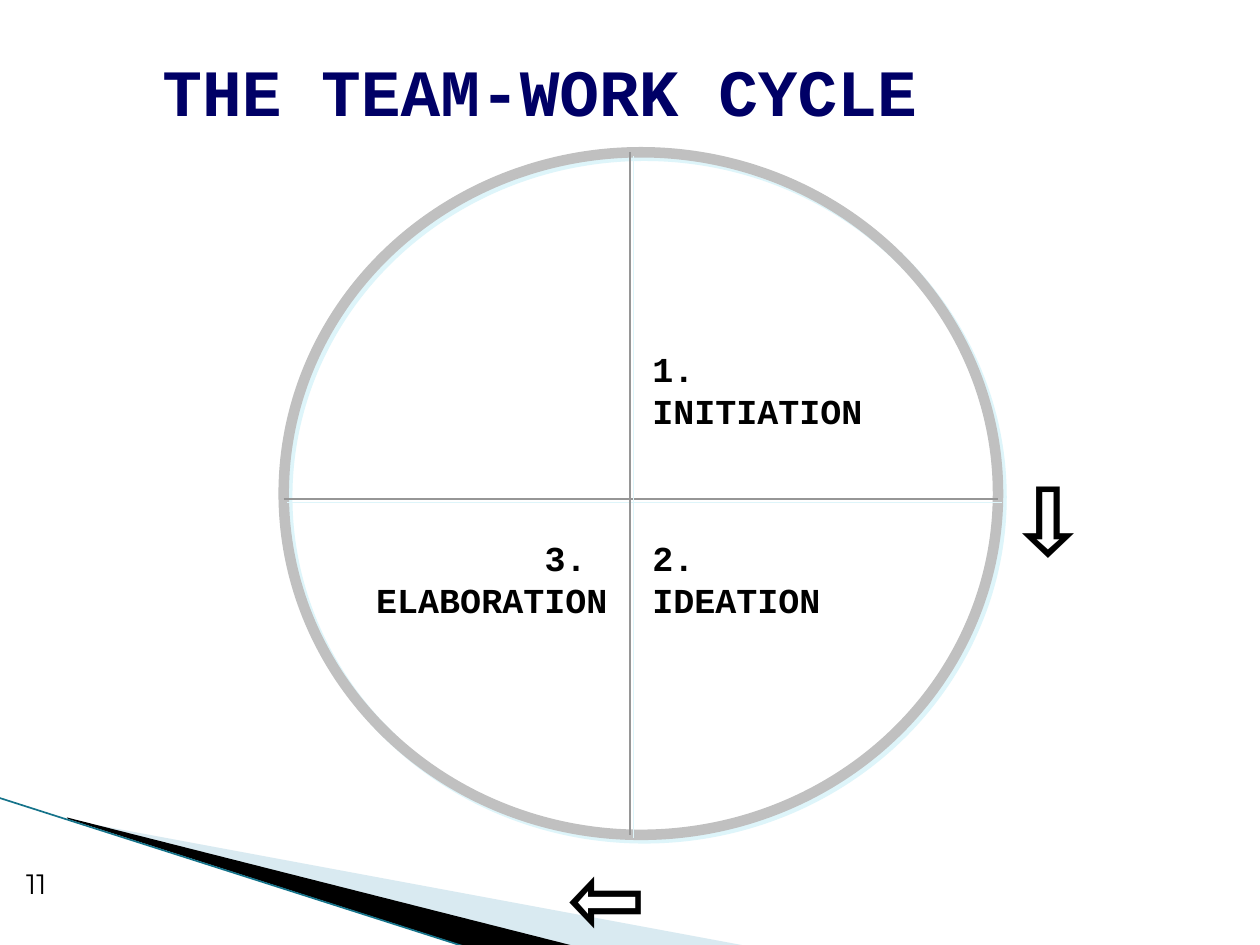
from lxml import etree
from pptx import Presentation
from pptx import util as u
from pptx.dml.color import RGBColor
from pptx.enum import shapes, text
from pptx.oxml.ns import qn

HEADING_FONT = "Courier New"
NUMBER_FONT = "Montserrat"
SHADOW_COLOR = "DEF5FA"
LINE_GREY = "969696"


def color(hex_string):
    return RGBColor.from_string(hex_string)


def set_shadow(shape, visible):
    """Give the shape an empty effect list, or one soft-coloured shadow."""
    properties = shape._element.spPr
    for old in properties.findall(qn("a:effectLst")):
        properties.remove(old)
    effects = etree.SubElement(properties, qn("a:effectLst"))
    if visible:
        shadow = etree.SubElement(effects, qn("a:outerShdw"), dist=str(u.Pt(2.8)),
                                  dir="2700000", algn="ctr", rotWithShape="0")
        etree.SubElement(shadow, qn("a:srgbClr"), val=SHADOW_COLOR)


def format_text(text_frame, size, hex_string="000000", font=HEADING_FONT,
                bold=True, align=text.PP_ALIGN.LEFT):
    for paragraph in text_frame.paragraphs:
        paragraph.alignment = align
        for run in paragraph.runs:
            run.font.name = font
            run.font.size = u.Pt(size)
            run.font.bold = bold
            run.font.color.rgb = color(hex_string)


def add_text(slide, content, left, top, width, height, size, **style):
    box = slide.shapes.add_textbox(u.Cm(left), u.Cm(top), u.Cm(width), u.Cm(height))
    box.text_frame.word_wrap = True
    box.text_frame.text = content
    format_text(box.text_frame, size, **style)


def add_line(slide, start, end, hex_string, width, shadow=False):
    line = slide.shapes.add_connector(
        shapes.MSO_CONNECTOR.STRAIGHT, *[u.Cm(value) for value in start + end])
    line.line.color.rgb = color(hex_string)
    line.line.width = u.Pt(width)
    set_shadow(line, shadow)


def add_wedge(slide, points, hex_string, opacity=100):
    corners = [(u.Cm(x), u.Cm(y)) for x, y in points]
    builder = slide.shapes.build_freeform(*corners[0])
    builder.add_line_segments(corners[1:], close=True)
    wedge = builder.convert_to_shape()
    wedge.fill.solid()
    wedge.fill.fore_color.rgb = color(hex_string)
    wedge.line.fill.background()
    set_shadow(wedge, False)
    if opacity < 100:
        fill_color = wedge._element.spPr.find(qn("a:solidFill"))[0]
        etree.SubElement(fill_color, qn("a:alpha"), val=str(opacity * 1000))


def add_title(slide, content):
    title = slide.shapes.title
    title.left, title.top = u.Cm(3.02), u.Cm(0.86)
    title.width, title.height = u.Cm(22.38), u.Cm(1.93)
    title.text_frame.text = content
    title.text_frame.vertical_anchor = text.MSO_ANCHOR.MIDDLE
    format_text(title.text_frame, 37.8, "000066")


def add_cycle(slide, left, top, width, height):
    """Draw the ring and the two lines that quarter it."""
    ring = slide.shapes.add_shape(shapes.MSO_SHAPE.OVAL, u.Cm(left), u.Cm(top),
                                  u.Cm(width), u.Cm(height))
    ring.fill.background()
    ring.line.color.rgb = color("C0C0C0")
    ring.line.width = u.Pt(6)
    set_shadow(ring, True)
    middle_x, middle_y = 12.7, 10.06
    add_line(slide, (left, middle_y), (left + width, middle_y), LINE_GREY, 0.75, True)
    add_line(slide, (middle_x, top), (middle_x, top + height), LINE_GREY, 0.75, True)


def main():
    presentation = Presentation()
    presentation.slide_width, presentation.slide_height = u.Cm(25.4), u.Cm(19.05)
    slide = presentation.slides.add_slide(presentation.slide_layouts[5])

    # Corner decoration
    add_wedge(slide, [(1.4, 16.53), (15.11, 19.08), (11.58, 19.08), (1.4, 16.51)],
              "A0CBDC", opacity=40)
    add_wedge(slide, [(1.35, 16.48), (11.61, 19.08), (9.45, 19.1), (1.37, 16.51)],
              "000000")
    add_line(slide, (-0.03, 16.08), (9.42, 19.1), "15738A", 0.95)

    add_title(slide, "THE TEAM-WORK CYCLE")
    add_cycle(slide, 5.72, 3.07, 14.4, 13.76)

    # Phases, with a line break after each number
    right = text.PP_ALIGN.RIGHT
    add_text(slide, "1. \vINITIATION", 12.9, 6.88, 6.99, 1.96, 20)
    add_text(slide, "2. \vIDEATION", 12.9, 10.69, 5.92, 1.96, 20)
    add_text(slide, "3. \vELABORATION", 3.61, 10.69, 8.89, 1.96, 20, align=right)

    # Direction arrows
    add_text(slide, "⇩", 20.12, 8.59, 2.54, 3.3, 72)
    add_text(slide, "⇦", 11.23, 16.23, 4.24, 3.3, 72)

    # Slide number
    add_text(slide, "11", 0.28, 17.35, 1.37, 1.27, 16, font=NUMBER_FONT, bold=False)

    presentation.save("out.pptx")


if __name__ == "__main__":
    main()
